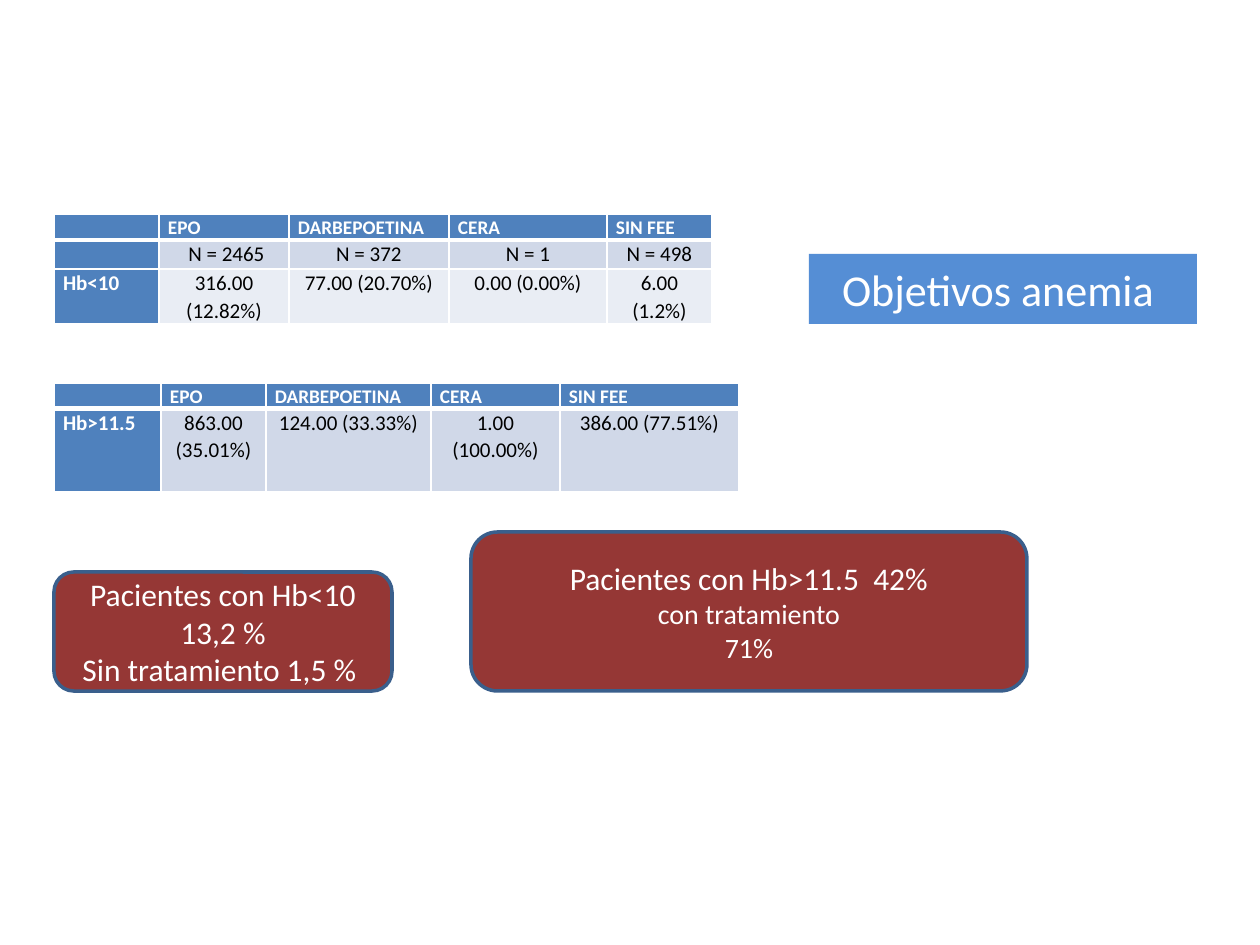
from dataclasses import dataclass

from lxml import etree
from pptx import Presentation
from pptx.dml.color import RGBColor
from pptx.enum.shapes import MSO_SHAPE
from pptx.enum.text import MSO_ANCHOR, PP_ALIGN
from pptx.oxml.ns import qn
from pptx.util import Emu, Pt

EMU_PER_PX = 914400 // 126
FONT = "Calibri"
WHITE, BLACK = "FFFFFF", "000000"
HEADER_BLUE, TITLE_BLUE, OUTLINE_BLUE = "4F81BD", "558ED5", "3A5F8C"
BAND_FILLS = ("D0D8E8", "E9EDF4")
DARK_RED = "953735"
RECTANGLE, ROUNDED = MSO_SHAPE.RECTANGLE, MSO_SHAPE.ROUNDED_RECTANGLE
LEFT, CENTER, MIDDLE = PP_ALIGN.LEFT, PP_ALIGN.CENTER, MSO_ANCHOR.MIDDLE
HEADINGS = ("", "EPO", "DARBEPOETINA", "CERA", "SIN FEE")


@dataclass
class Line:
    text: str
    size: float


@dataclass
class Box:
    left: int
    top: int
    width: int
    height: int
    preset: MSO_SHAPE
    fill: str
    outline: str | None
    lines: list[Line]


@dataclass
class ResultTable:
    left: int
    top: int
    column_widths: tuple[int, ...]
    row_heights: tuple[int, ...]
    body: list[tuple[str, ...]]


BOXES = [
    Box(809, 254, 388, 70, RECTANGLE, TITLE_BLUE, None,
        [Line("Objetivos anemia ", 25.2)]),
    Box(54, 572, 338, 119, ROUNDED, DARK_RED, OUTLINE_BLUE,
        [Line("Pacientes con Hb<10 13,2 %", 18),
         Line("Sin tratamiento 1,5 % ", 18)]),
    Box(471, 532, 556, 159, ROUNDED, DARK_RED, OUTLINE_BLUE,
        [Line("Pacientes con Hb>11.5  42%", 18),
         Line("con tratamiento", 16),
         Line("71%", 16)]),
]

TABLES = [
    ResultTable(54, 214, (105, 130, 160, 158, 105), (26, 29, 55), [
        ("", " N = 2465", "N = 372", "N = 1", "N = 498"),
        ("Hb<10", "316.00 (12.82%)", "77.00 (20.70%)", "0.00 (0.00%)",
         "6.00 (1.2%)"),
    ]),
    ResultTable(54, 383, (107, 105, 165, 129, 179), (25, 83), [
        ("Hb>11.5", "863.00 (35.01%)", "124.00 (33.33%)",
         "1.00 (100.00%)", "386.00 (77.51%)"),
    ]),
]


def px(length: int) -> Emu:
    return Emu(length * EMU_PER_PX)


def color(value: str) -> RGBColor:
    return RGBColor.from_string(value)


def style_paragraph(paragraph, size: float, font_color: str, alignment,
                    bold: bool = False) -> None:
    paragraph.alignment = alignment
    paragraph.font.name = FONT
    paragraph.font.size = Pt(size)
    paragraph.font.bold = bold
    paragraph.font.color.rgb = color(font_color)


def add_box(slide, box: Box) -> None:
    shape = slide.shapes.add_shape(
        box.preset, px(box.left), px(box.top), px(box.width), px(box.height))
    shape.shadow.inherit = False
    shape.fill.solid()
    shape.fill.fore_color.rgb = color(box.fill)
    if box.outline:
        shape.line.color.rgb = color(box.outline)
        shape.line.width = Pt(2)
    else:
        shape.line.fill.background()
    frame = shape.text_frame
    frame.word_wrap = True
    frame.vertical_anchor = MIDDLE
    for index, line in enumerate(box.lines):
        paragraph = frame.add_paragraph() if index else frame.paragraphs[0]
        paragraph.text = line.text
        style_paragraph(paragraph, line.size, WHITE, CENTER)


def add_cell_borders(cell, bottom_width: int) -> None:
    properties = cell._tc.get_or_add_tcPr()
    for side, width in (("L", 1), ("R", 1), ("T", 1), ("B", bottom_width)):
        border = etree.SubElement(properties, qn(f"a:ln{side}"), w=str(Pt(width)))
        fill = etree.SubElement(border, qn("a:solidFill"))
        etree.SubElement(fill, qn("a:srgbClr"), val=WHITE)


def fill_cell(cell, text: str, row: int, column: int) -> None:
    is_header = row == 0
    is_label = is_header or column == 0
    add_cell_borders(cell, 3 if is_header else 1)
    cell.fill.solid()
    cell.fill.fore_color.rgb = color(
        HEADER_BLUE if is_label else BAND_FILLS[(row - 1) % 2])
    cell.margin_left = cell.margin_right = px(9)
    cell.margin_top = cell.margin_bottom = 0
    paragraph = cell.text_frame.paragraphs[0]
    if text:
        paragraph.text = text
    paragraph.line_spacing = 1.07
    style_paragraph(paragraph, 11 if is_header else 12,
                    WHITE if is_label else BLACK,
                    LEFT if is_label else CENTER, is_label)


def add_result_table(slide, result: ResultTable) -> None:
    rows = [HEADINGS, *result.body]
    table = slide.shapes.add_table(
        len(rows), len(HEADINGS), px(result.left), px(result.top),
        px(sum(result.column_widths)), px(sum(result.row_heights))).table
    for column, width in zip(table.columns, result.column_widths):
        column.width = px(width)
    for row, height in zip(table.rows, result.row_heights):
        row.height = px(height)
    for row_index, texts in enumerate(rows):
        for column_index, text in enumerate(texts):
            fill_cell(table.cell(row_index, column_index), text,
                      row_index, column_index)


def main() -> None:
    presentation = Presentation()
    presentation.slide_width = px(1260)
    presentation.slide_height = px(945)
    slide = presentation.slides.add_slide(presentation.slide_layouts[6])
    title, *summaries = BOXES
    add_box(slide, title)
    for result in TABLES:
        add_result_table(slide, result)
    for summary in summaries:
        add_box(slide, summary)
    presentation.save("out.pptx")


if __name__ == "__main__":
    main()
